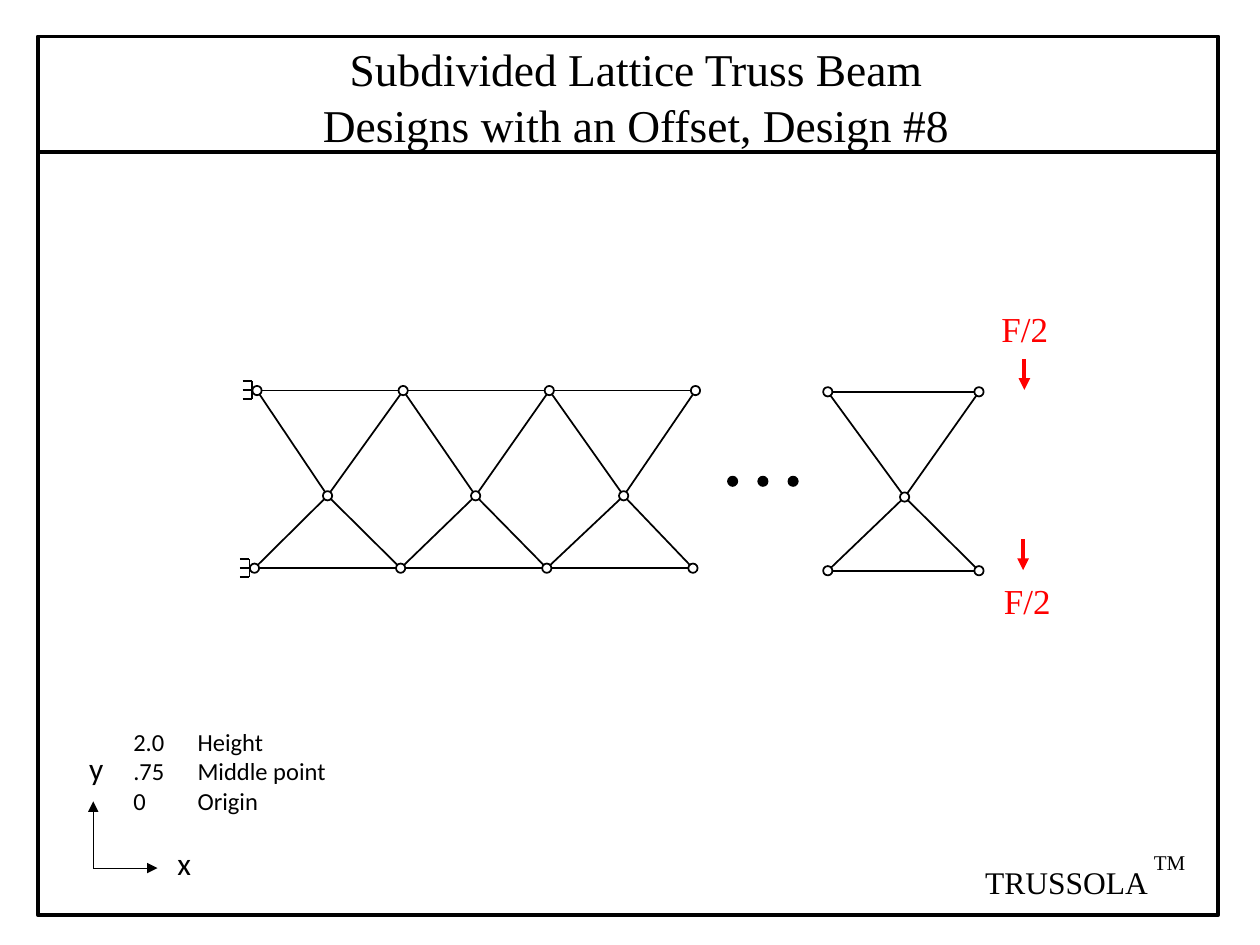
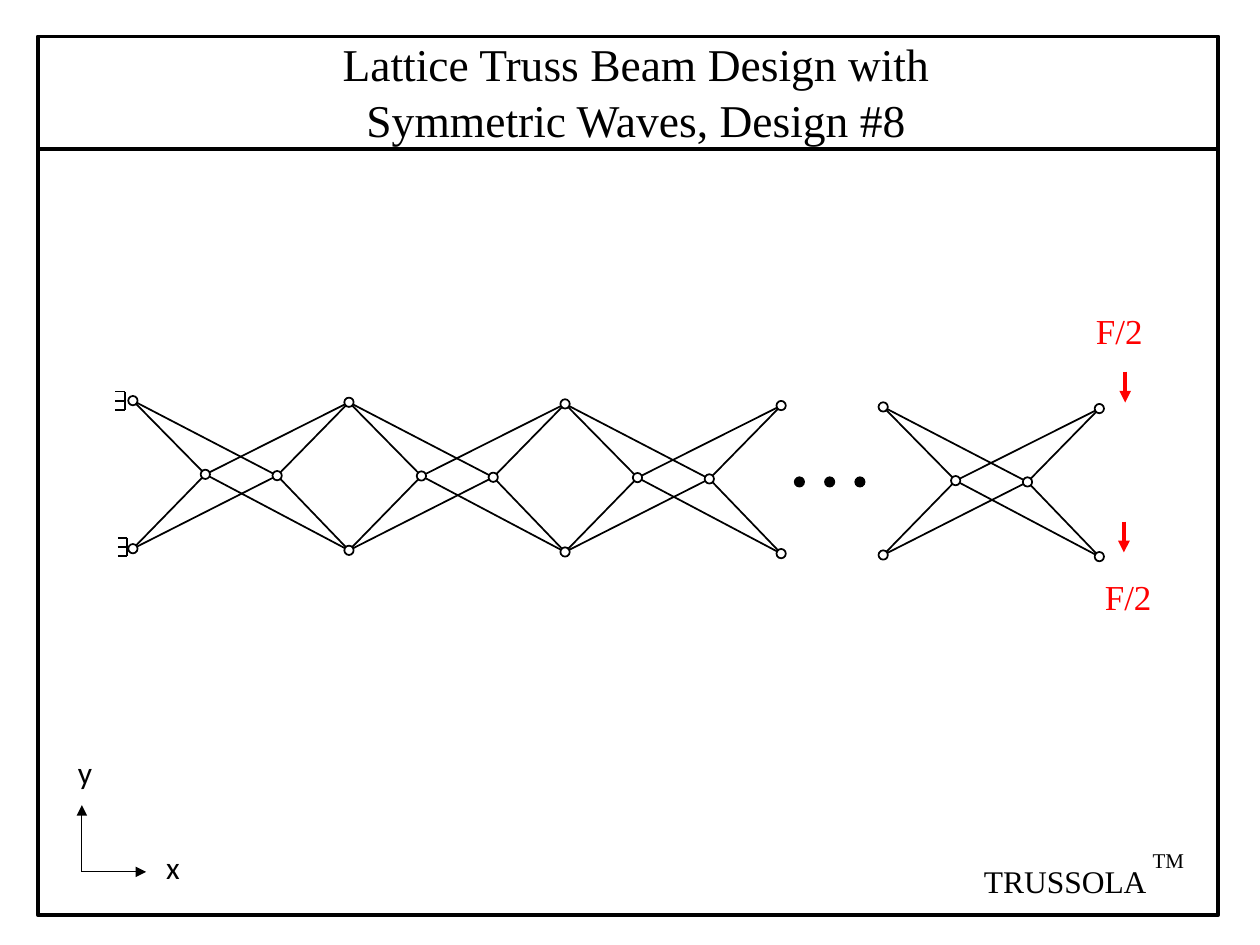
from itertools import product

from pptx import Presentation
from pptx.dml.color import RGBColor
from pptx.enum.shapes import MSO_CONNECTOR as CONN, MSO_SHAPE as SHAPE
from pptx.enum.text import MSO_ANCHOR as ANCHOR, MSO_AUTO_SIZE as FIT, PP_ALIGN as ALIGN
from pptx.oxml.ns import qn
from pptx.util import Inches, Pt
from lxml.etree import SubElement

COLS, ROWS = 100, 75
BLACK, WHITE, RED = "000000", "FFFFFF", "FF0000"
SERIF, SANS = "Times New Roman", "Calibri"


def rgb(code):
    return RGBColor.from_string(code)


def write(tf, text, size=18, font=SERIF, color=BLACK, align=ALIGN.LEFT, spacing=1.0, tab=None):
    tf.word_wrap = True
    for i, line in enumerate(text.split("\n")):
        p = tf.paragraphs[0] if i == 0 else tf.add_paragraph()
        p.alignment, p.line_spacing = align, spacing
        if tab:
            tabs = SubElement(p._p.get_or_add_pPr(), qn("a:tabLst"))
            SubElement(tabs, qn("a:tab"), pos=str(tab), algn="l")
        r = p.add_run()
        r.text = line
        r.font.name, r.font.size, r.font.color.rgb = font, Pt(size), rgb(color)


class Board:
    """Style and current slide, measured in grid columns and rows."""

    def __init__(self, prs):
        self.prs = prs
        self.col, self.row = prs.slide_width / COLS, prs.slide_height / ROWS

    def box(self, x, y, w, h):
        return int(x * self.col), int(y * self.row), int(w * self.col), int(h * self.row)

    def new_slide(self, title, top, rule):
        self.slide = self.prs.slides.add_slide(self.prs.slide_layouts[5])
        sp = self.slide.shapes.title
        sp.left, sp.top, sp.width, sp.height = self.box(23.5, top, 54, 9.8)
        tf = sp.text_frame
        tf.auto_size, tf.vertical_anchor = FIT.NONE, ANCHOR.MIDDLE
        write(tf, title, size=26, align=ALIGN.CENTER, spacing=1.03)
        self.shape(SHAPE.RECTANGLE, 3, 2.9, 93.7, 69.7, width=2.25)
        self.line((3, rule), (96.7, rule), width=2.25)

    def shape(self, kind, x, y, w, h, fill=None, width=1):
        sp = self.slide.shapes.add_shape(kind, *self.box(x, y, w, h))
        sp.shadow.inherit = False
        if fill:
            sp.fill.solid()
            sp.fill.fore_color.rgb = rgb(fill)
        else:
            sp.fill.background()
        sp.line.color.rgb, sp.line.width = rgb(BLACK), Pt(width)

    def line(self, start, end, color=BLACK, width=1, arrow=False):
        ends = self.box(*start, *end)
        ln = self.slide.shapes.add_connector(CONN.STRAIGHT, *ends)
        ln.line.color.rgb, ln.line.width = rgb(color), Pt(width)
        if arrow:
            SubElement(ln.line._get_or_add_ln(), qn("a:tailEnd"), type="triangle")
        SubElement(ln._element.spPr, qn("a:effectLst"))

    def text(self, text, x, y, w, h, **style):
        sp = self.slide.shapes.add_textbox(*self.box(x, y, w, h))
        write(sp.text_frame, text, **style)

    def node(self, x, y, fill=WHITE):
        self.shape(SHAPE.OVAL, x - 0.37, y - 0.37, 0.74, 0.74, fill)

    def truss(self, bays, chords=False):
        for corners, mids in bays:
            for corner, mid in product(corners, mids):
                self.line(corner, mid)
            if chords:
                for left, right in (corners[:2], corners[2:]):
                    self.line(left, right)
        for x, y in dict.fromkeys(n for corners, mids in bays for n in corners + mids):
            self.node(x, y)

    def support(self, x, y):
        self.line((x, y - 0.72), (x, y + 0.72))
        for dy in (-0.72, 0, 0.72):
            self.line((x - 0.75, y + dy), (x, y + dy))

    def dots(self, x, y):
        for i in range(3):
            self.node(x + 2.4 * i, y, BLACK)

    def force(self, x, y, label_x, label_y):
        self.line((x, y), (x, y + 2.45), RED, 2.25, arrow=True)
        self.text("F/2", label_x, label_y, 7, 4.4, size=20, color=RED)

    def axes(self, x, y):
        self.line((x, y), (x + 5.1, y), width=0.5, arrow=True)
        self.line((x, y), (x, y - 5.3), width=0.5, arrow=True)
        self.text("x", x + 5.7, y - 2.4, 3.1, 4, font=SANS)
        self.text("y", x - 1.3, y - 9.95, 3.1, 4, font=SANS)

    def mark(self, x, y):
        self.text("TRUSSOLA", x, y, 15.2, 4)
        self.text("TM", x + 13.4, y - 1.1, 5.1, 4, size=12)


def offset_bay(top_x, low_x, mid_x, y, pitch=11.6, depth=14.1):
    xs = (top_x, top_x + pitch, low_x, low_x + pitch)
    ys = (y, y, y + depth, y + depth)
    corners = [(round(cx, 2), round(cy, 2)) for cx, cy in zip(xs, ys)]
    return corners, [(mid_x, y + 8.35)]


def wave_bay(x, y, pitch=17.15, drift=0.13):
    right, low = x + pitch, y + 11.75
    corners = [(x, y), (right, y + drift), (x, low), (right, low + drift)]
    mids = [(x + 5.75, y + 5.85), (x + 11.45, y + 5.95)]
    return [(round(cx, 2), round(cy, 2)) for cx, cy in corners], mids


def offset_slide(b):
    b.new_slide("Subdivided Lattice Truss Beam\nDesigns with an Offset, Design #8", 2.7, 12.1)
    bays = [offset_bay(20.4 + 11.6 * i, 20.2 + 11.6 * i, 26 + 11.75 * i, 31) for i in range(3)]
    bays.append(offset_bay(65.7, 65.7, 71.8, 31.1, pitch=12, depth=14.2))
    b.truss(bays, chords=True)
    b.support(20, 30.95)
    b.support(19.8, 45.1)
    b.dots(58.15, 38.2)
    b.force(81.3, 28.5, 78.5, 23.9)
    b.force(81.2, 42.8, 78.7, 45.5)
    b.axes(7.4, 68.9)
    b.text("2.0\tHeight\n.75\tMiddle point\n0\tOrigin", 9.6, 57.2, 19.7, 8.1,
           size=14, font=SANS, tab=Inches(0.51))
    b.mark(77.2, 68)


def wave_slide(b):
    b.new_slide("Lattice Truss Beam Design with\nSymmetric Waves, Design #8", 2.3, 11.8)
    bays = [wave_bay(10.55 + 17.15 * i, 31.8 + 0.13 * i) for i in range(3)]
    bays.append(wave_bay(70.1, 32.3))
    b.truss(bays)
    b.support(9.9, 31.8)
    b.support(10.1, 43.4)
    b.dots(63.45, 38.25)
    b.force(89.3, 29.5, 86, 24.1)
    b.force(89.2, 41.4, 86.7, 45.2)
    b.axes(6.5, 69.2)
    b.mark(77.1, 67.9)


def main():
    prs = Presentation()
    prs.slide_width, prs.slide_height = Inches(10), Inches(7.5)
    b = Board(prs)
    offset_slide(b)
    wave_slide(b)
    prs.save("out.pptx")


if __name__ == "__main__":
    main()
